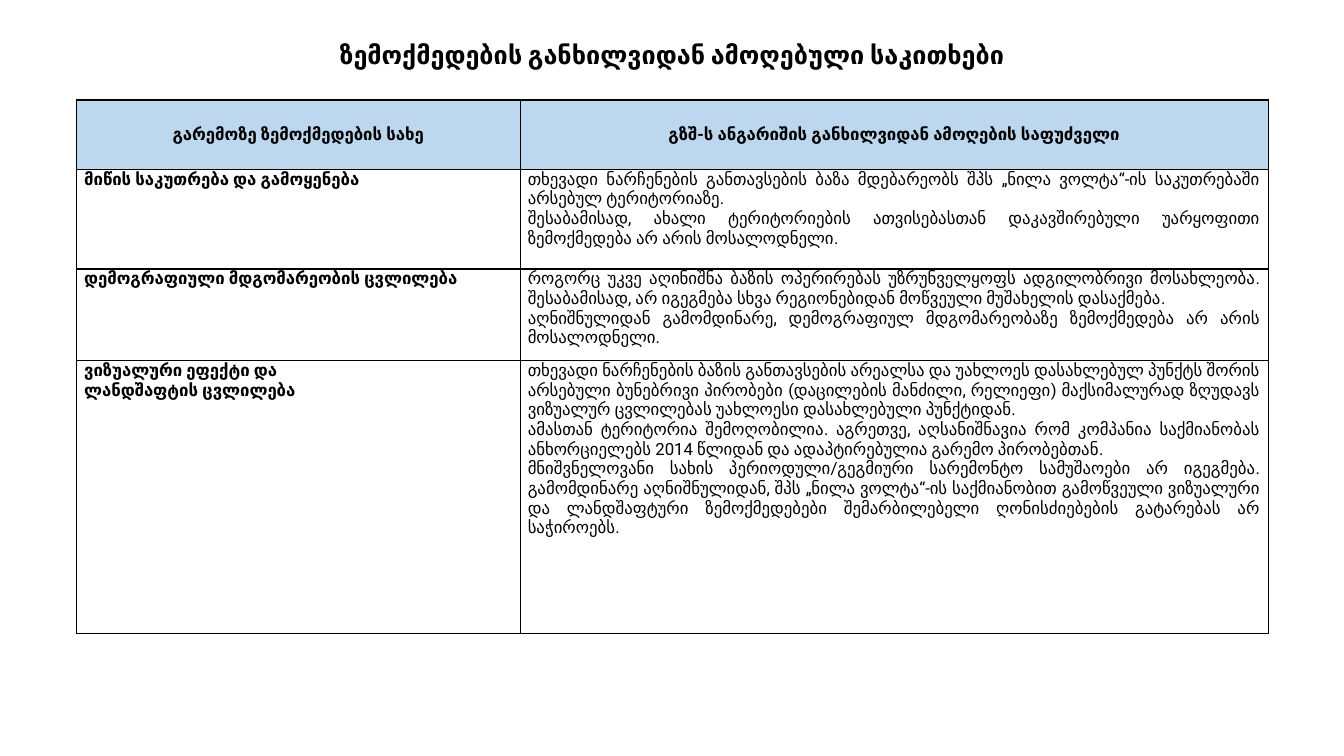
from lxml.etree import SubElement
from pptx import Presentation
from pptx.dml.color import RGBColor
from pptx.enum.text import MSO_ANCHOR as Anchor, PP_ALIGN as Align
from pptx.oxml.ns import qn
from pptx.util import Cm, Pt


def rgb(value):
    return RGBColor.from_string(value)


def add_borders(cell, color, width):
    """Draw a solid line on all four sides; call before the fill is set."""
    tc_pr = cell._tc.get_or_add_tcPr()
    for side in ("a:lnL", "a:lnR", "a:lnT", "a:lnB"):
        ln = SubElement(tc_pr, qn(side), w=str(Pt(width)))
        fill = SubElement(ln, qn("a:solidFill"))
        SubElement(fill, qn("a:srgbClr"), val=color)


BLACK = "000000"
HEADER_BLUE = "BDD7EE"

ROWS = [
    (["გარემოზე ზემოქმედების სახე"],
     ["გზშ-ს ანგარიშის განხილვიდან ამოღების საფუძველი"]),
    (["მიწის საკუთრება და გამოყენება"],
     ["თხევადი ნარჩენების განთავსების ბაზა მდებარეობს შპს „ნილა ვოლტა“-ის "
      "საკუთრებაში არსებულ ტერიტორიაზე.",
      "შესაბამისად, ახალი ტერიტორიების ათვისებასთან დაკავშირებული უარყოფითი "
      "ზემოქმედება არ არის მოსალოდნელი."]),
    (["დემოგრაფიული მდგომარეობის ცვლილება"],
     ["როგორც უკვე აღინიშნა ბაზის ოპერირებას უზრუნველყოფს ადგილობრივი "
      "მოსახლეობა. შესაბამისად, არ იგეგმება სხვა რეგიონებიდან მოწვეული "
      "მუშახელის დასაქმება.",
      "აღნიშნულიდან გამომდინარე, დემოგრაფიულ მდგომარეობაზე ზემოქმედება არ არის "
      "მოსალოდნელი."]),
    (["ვიზუალური ეფექტი და", "ლანდშაფტის ცვლილება"],
     ["თხევადი ნარჩენების ბაზის განთავსების არეალსა და უახლოეს დასახლებულ პუნქტს "
      "შორის არსებული ბუნებრივი პირობები (დაცილების მანძილი, რელიეფი) "
      "მაქსიმალურად ზღუდავს ვიზუალურ ცვლილებას უახლოესი დასახლებული პუნქტიდან.",
      "ამასთან ტერიტორია შემოღობილია. აგრეთვე, აღსანიშნავია რომ კომპანია "
      "საქმიანობას ანხორციელებს 2014 წლიდან და ადაპტირებულია გარემო პირობებთან.",
      "მნიშვნელოვანი სახის პერიოდული/გეგმიური სარემონტო სამუშაოები არ იგეგმება. "
      "გამომდინარე აღნიშნულიდან, შპს „ნილა ვოლტა“-ის საქმიანობით გამოწვეული "
      "ვიზუალური და ლანდშაფტური ზემოქმედებები შემარბილებელი ღონისძიებების "
      "გატარებას არ საჭიროებს."]),
]
COLUMN_WIDTHS = [11.18, 18.85]
ROW_HEIGHTS = [1.75, 2.51, 2.31, 6.88]

prs = Presentation()
prs.slide_width, prs.slide_height = Cm(33.87), Cm(19.05)
s = prs.slides.add_slide(prs.slide_layouts[5])

title = s.shapes.title
title.left, title.top, title.width, title.height = Cm(2.33), Cm(0.86), Cm(29.21), Cm(1.12)
tf = title.text_frame
tf.text = "ზემოქმედების განხილვიდან ამოღებული საკითხები"
tf.vertical_anchor = Anchor.MIDDLE
p = tf.paragraphs[0]
p.alignment = Align.CENTER
p.line_spacing = 0.9
p.font.name, p.font.size, p.font.bold = "Calibri", Pt(18), True
p.font.color.rgb = rgb(BLACK)

table = s.shapes.add_table(
    len(ROWS), len(COLUMN_WIDTHS), Cm(1.93), Cm(2.52),
    Cm(sum(COLUMN_WIDTHS)), Cm(sum(ROW_HEIGHTS))).table
table.horz_banding = False
for column, width in zip(table.columns, COLUMN_WIDTHS):
    column.width = Cm(width)
for row, height in zip(table.rows, ROW_HEIGHTS):
    row.height = Cm(height)

for i, texts in enumerate(ROWS):
    for j, lines in enumerate(texts):
        is_header = i == 0
        cell = table.cell(i, j)
        cell.margin_left = cell.margin_right = Cm(0.19)
        cell.margin_top = cell.margin_bottom = 0
        cell.vertical_anchor = Anchor.MIDDLE if is_header else Anchor.TOP
        add_borders(cell, BLACK, 1)
        if is_header:
            cell.fill.solid()
            cell.fill.fore_color.rgb = rgb(HEADER_BLUE)
            alignment = Align.CENTER
        else:
            cell.fill.background()
            alignment = Align.JUSTIFY if j else Align.LEFT
        cell.text_frame.text = "\n".join(lines)
        for p in cell.text_frame.paragraphs:
            p.alignment = alignment
            p.font.name, p.font.size = "Roboto", Pt(12)
            p.font.bold = is_header or j == 0
            p.font.color.rgb = rgb(BLACK)

prs.save("out.pptx")
